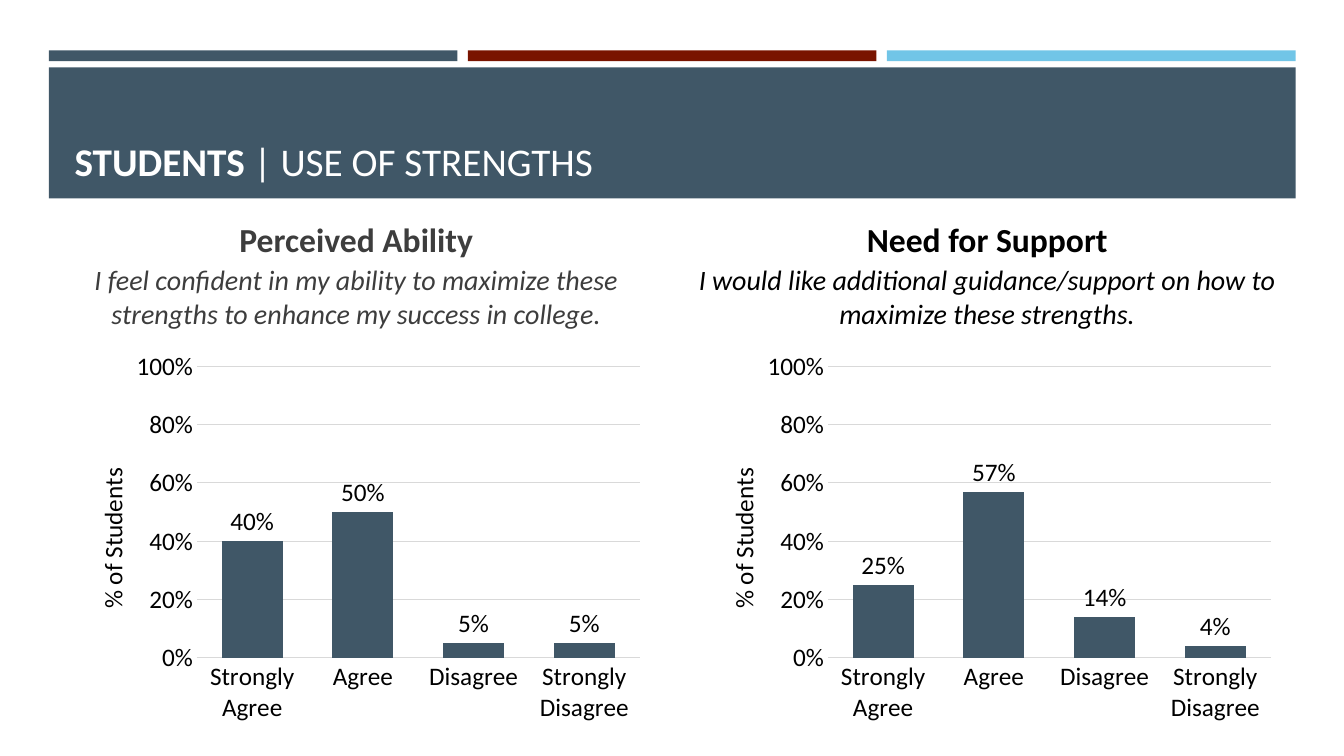
from pptx import Presentation
from pptx.chart import data
from pptx.dml.color import RGBColor
from pptx.enum import chart as charts, shapes, text
from pptx.oxml import ns, xmlchemy
from pptx.util import Cm, Pt

COLORS = {
    "slate": "405767", "red": "791400", "sky": "71C5E7", "white": "FFFFFF",
    "gray": "3D3D3D", "black": "000000", "grid": "D9D9D9",
}
FONT = "Calibri"
ANSWERS = ["Strongly Agree", "Agree", "Disagree", "Strongly Disagree"]
PANELS = [
    ("Perceived Ability",
     "I feel confident in my ability to maximize these strengths to enhance "
     "my success in college.",
     "gray", [0.4, 0.5, 0.05, 0.05]),
    ("Need for Support",
     "I would like additional guidance/support on how to maximize these strengths.",
     "black", [0.25, 0.57, 0.14, 0.04]),
]


def color(name):
    return RGBColor.from_string(COLORS[name])


def style(font, size, name, bold=False, italic=False):
    font.name, font.size = FONT, Pt(size)
    font.bold, font.italic = bold, italic
    font.color.rgb = color(name)


def add_bar(page, left, top, width, height, name):
    bar = page.shapes.add_shape(shapes.MSO_SHAPE.RECTANGLE,
                                Cm(left), Cm(top), Cm(width), Cm(height))
    bar.shadow.inherit = False
    bar.fill.solid()
    bar.fill.fore_color.rgb = color(name)
    bar.line.fill.background()


def add_text(page, left, top, width, height):
    box = page.shapes.add_textbox(Cm(left), Cm(top), Cm(width), Cm(height))
    box.text_frame.word_wrap = True
    return box.text_frame


def add_header(page, left, top, width):
    """Three accent strips above a band that holds the title."""
    gap = 0.26
    strip = (width - 2 * gap) / 3
    for index, name in enumerate(("slate", "red", "sky")):
        add_bar(page, left + index * (strip + gap), top, strip, 0.27, name)
    add_bar(page, left, top + 0.43, width, 3.3, "slate")

    frame = add_text(page, left + 0.4, top + 0.69, width - 0.8, 2.82)
    frame.vertical_anchor = text.MSO_ANCHOR.BOTTOM
    for words, bold in (("STUDENTS ", True), ("| USE OF STRENGTHS", False)):
        span = frame.paragraphs[0].add_run()
        span.text = words
        style(span.font, 28, "white", bold=bold)


def place(parent, after, **fractions):
    """Give a chart part a manual layout, as fractions of the chart."""
    layout = parent.find(ns.qn("c:layout"))
    if layout is None:
        layout = xmlchemy.OxmlElement("c:layout")
        parent.insert(after, layout)
    manual = xmlchemy.OxmlElement("c:manualLayout")
    layout.append(manual)
    settings = {"xMode": "edge", "yMode": "edge", **fractions}
    if "w" in fractions:
        settings = {"layoutTarget": "inner", **settings}
    for tag, value in settings.items():
        item = xmlchemy.OxmlElement(f"c:{tag}")
        item.set("val", str(value))
        manual.append(item)


def add_answers_chart(page, left, top, width, height, values):
    table = data.CategoryChartData(number_format="0%")
    table.categories = ANSWERS
    table.add_series("Series 1", values)
    chart = page.shapes.add_chart(
        charts.XL_CHART_TYPE.COLUMN_CLUSTERED,
        Cm(left), Cm(top), Cm(width), Cm(height), table).chart
    chart.has_legend = chart.has_title = False
    style(chart.font, 18, "black")

    plot = chart.plots[0]
    plot.gap_width, plot.overlap = 81, -27
    plot.vary_by_categories = False
    fill = plot.series[0].format.fill
    fill.solid()
    fill.fore_color.rgb = color("slate")
    plot.has_data_labels = True
    labels = plot.data_labels
    labels.show_value = True
    labels.position = charts.XL_LABEL_POSITION.OUTSIDE_END
    labels.number_format, labels.number_format_is_linked = "0%", False
    style(labels.font, 18, "black")

    answers, share = chart.category_axis, chart.value_axis
    for axis in (answers, share):
        axis.major_tick_mark = axis.minor_tick_mark = charts.XL_TICK_MARK.NONE
        style(axis.tick_labels.font, 18, "black")
    share.minimum_scale, share.maximum_scale, share.major_unit = 0, 1, 0.2
    share.tick_labels.number_format = "0%"
    share.tick_labels.number_format_is_linked = False
    share.format.line.fill.background()
    for line in (answers.format.line, share.major_gridlines.format.line):
        line.color.rgb = color("grid")
        line.width = Pt(0.75)

    title = share.axis_title
    para = title.text_frame.paragraphs[0]
    para.text = "% of Students"
    style(para.runs[0].font, 18, "black")
    place(title.element, 1, x=0.05, y=0.31)
    place(chart.element.find(".//" + ns.qn("c:plotArea")), 0,
          x=0.23, y=0.06, w=0.75, h=0.75)


def add_panel(page, left, top, heading, statement, name, values):
    """A heading and survey statement over a chart of the answers."""
    frame = add_text(page, left, top, 15.32, 12.17)
    lines = ((heading, 24, True), (statement, 20, False))
    for index, (words, size, is_heading) in enumerate(lines):
        para = frame.add_paragraph() if index else frame.paragraphs[0]
        para.text = words
        para.alignment = text.PP_ALIGN.CENTER
        para.space_after = Pt(3)
        style(para.runs[0].font, size, name, bold=is_heading, italic=not is_heading)
    add_answers_chart(page, left + 0.22, top + 3.26, 14.88, 9.8, values)


def main():
    deck = Presentation()
    deck.slide_width, deck.slide_height = Cm(33.87), Cm(19.05)
    page = deck.slides.add_slide(deck.slide_layouts[6])
    add_header(page, 1.23, 1.27, 31.42)
    for index, panel in enumerate(PANELS):
        add_panel(page, 1.32 + index * 15.9, 5.38, *panel)
    deck.save("out.pptx")


if __name__ == "__main__":
    main()
